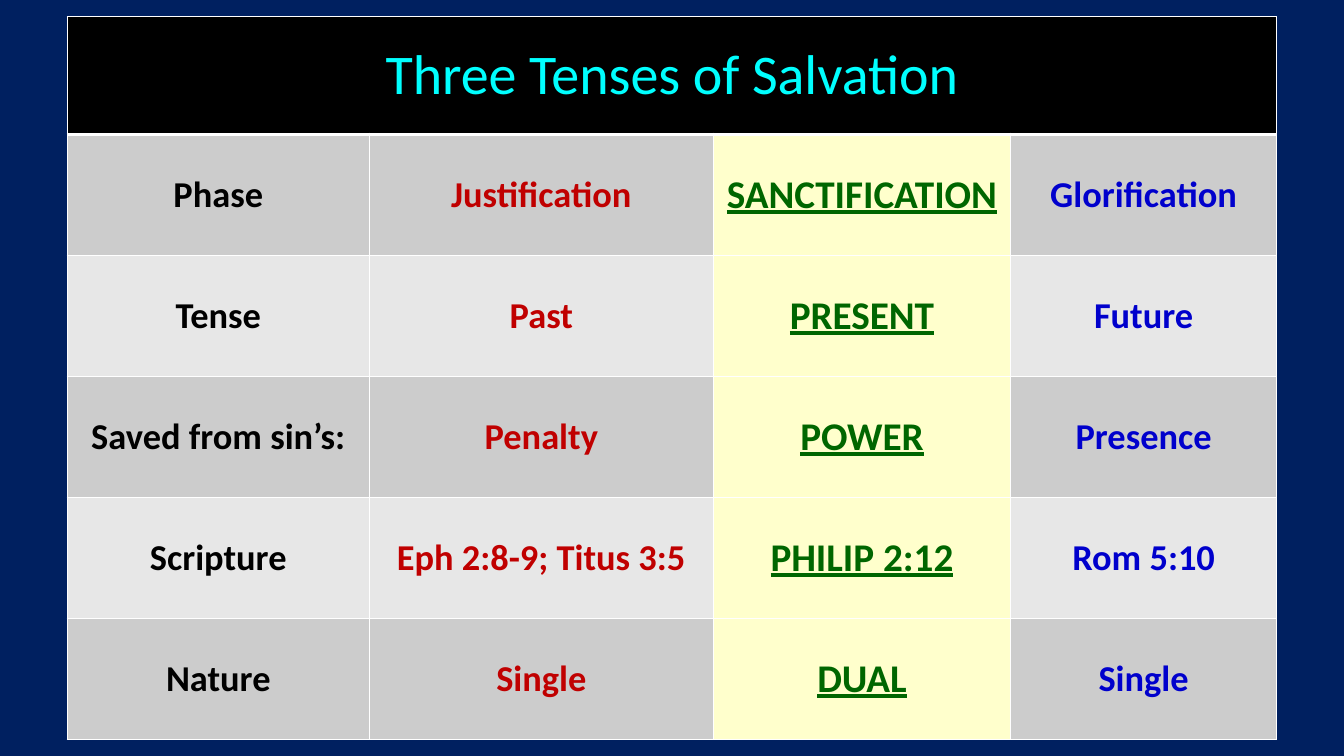
from lxml.etree import SubElement as Sub
from pptx import Presentation
from pptx.dml.color import RGBColor as Rgb
from pptx.enum.text import MSO_ANCHOR as Anchor, PP_ALIGN as Align
from pptx.oxml.ns import qn
from pptx.util import Pt

TITLE = "Three Tenses of Salvation"
ROWS = [
    ("Phase", "Justification", "SANCTIFICATION", "Glorification"),
    ("Tense", "Past", "PRESENT", "Future"),
    ("Saved from sin’s:", "Penalty", "POWER", "Presence"),
    ("Scripture", "Eph 2:8-9; Titus 3:5", "PHILIP 2:12", "Rom 5:10"),
    ("Nature", "Single", "DUAL", "Single"),
]
HUES = {
    "back": "002060", "head": "000000", "title": "00FFFF", "line": "FFFFFF",
    "dark": "CCCCCC", "light": "E7E7E7", "focus": "FFFFCC",
    "label": "000000", "past": "C00000", "now": "006600", "next": "0000CC",
}
TENSES = ["label", "past", "now", "next"]
FONT = "Calibri"
LEFT, TOP = 48, 12
WIDTHS = [216, 245.5, 212.5, 190]
HEAD, STEP = 84, 86.4


def tint(name):
    return Rgb.from_string(HUES[name])


def edge(cell, base):
    props = cell._tc.get_or_add_tcPr()
    for side, wide in (("L", 1), ("R", 1), ("T", 1), ("B", base)):
        line = Sub(props, qn(f"a:ln{side}"), w=str(Pt(wide)))
        fill = Sub(line, qn("a:solidFill"))
        Sub(fill, qn("a:srgbClr"), val=HUES["line"])


def paint(cell, fill, base=1):
    edge(cell, base)
    cell.fill.solid()
    cell.fill.fore_color.rgb = tint(fill)
    cell.vertical_anchor = Anchor.MIDDLE


def write(cell, text, size, hue, bold, under=False):
    para = cell.text_frame.paragraphs[0]
    para.alignment = Align.CENTER
    run = para.add_run()
    run.text = text
    font = run.font
    font.name, font.size, font.bold = FONT, Pt(size), bold
    font.underline = under
    font.color.rgb = tint(hue)
    return para


def main():
    deck = Presentation()
    deck.slide_width, deck.slide_height = Pt(960), Pt(540)
    slide = deck.slides.add_slide(deck.slide_layouts[6])
    slide.background.fill.solid()
    slide.background.fill.fore_color.rgb = tint("back")

    high = HEAD + STEP * len(ROWS)
    table = slide.shapes.add_table(
        len(ROWS) + 1, len(WIDTHS), Pt(LEFT), Pt(TOP), Pt(sum(WIDTHS)), Pt(high)
    ).table
    for col, wide in zip(table.columns, WIDTHS):
        col.width = Pt(wide)
    for num, row in enumerate(table.rows):
        row.height = Pt(STEP if num else HEAD)

    for col in range(len(WIDTHS)):
        paint(table.cell(0, col), "head", 3)
    top = table.cell(0, 0)
    top.merge(table.cell(0, len(WIDTHS) - 1))
    para = write(top, TITLE, 40, "title", False)
    para.line_spacing = 0.9
    para.space_after = Pt(12)

    for num, words in enumerate(ROWS):
        band = "light" if num % 2 else "dark"
        for col, (text, tense) in enumerate(zip(words, TENSES)):
            now = tense == "now"
            cell = table.cell(num + 1, col)
            paint(cell, "focus" if now else band)
            write(cell, text, 28 if now else 26, tense, True, now)
            if num == 0:
                line = cell._tc.tcPr.find(qn("a:lnT"))
                line.set("w", str(Pt(3)))

    deck.save("out.pptx")


if __name__ == "__main__":
    main()
